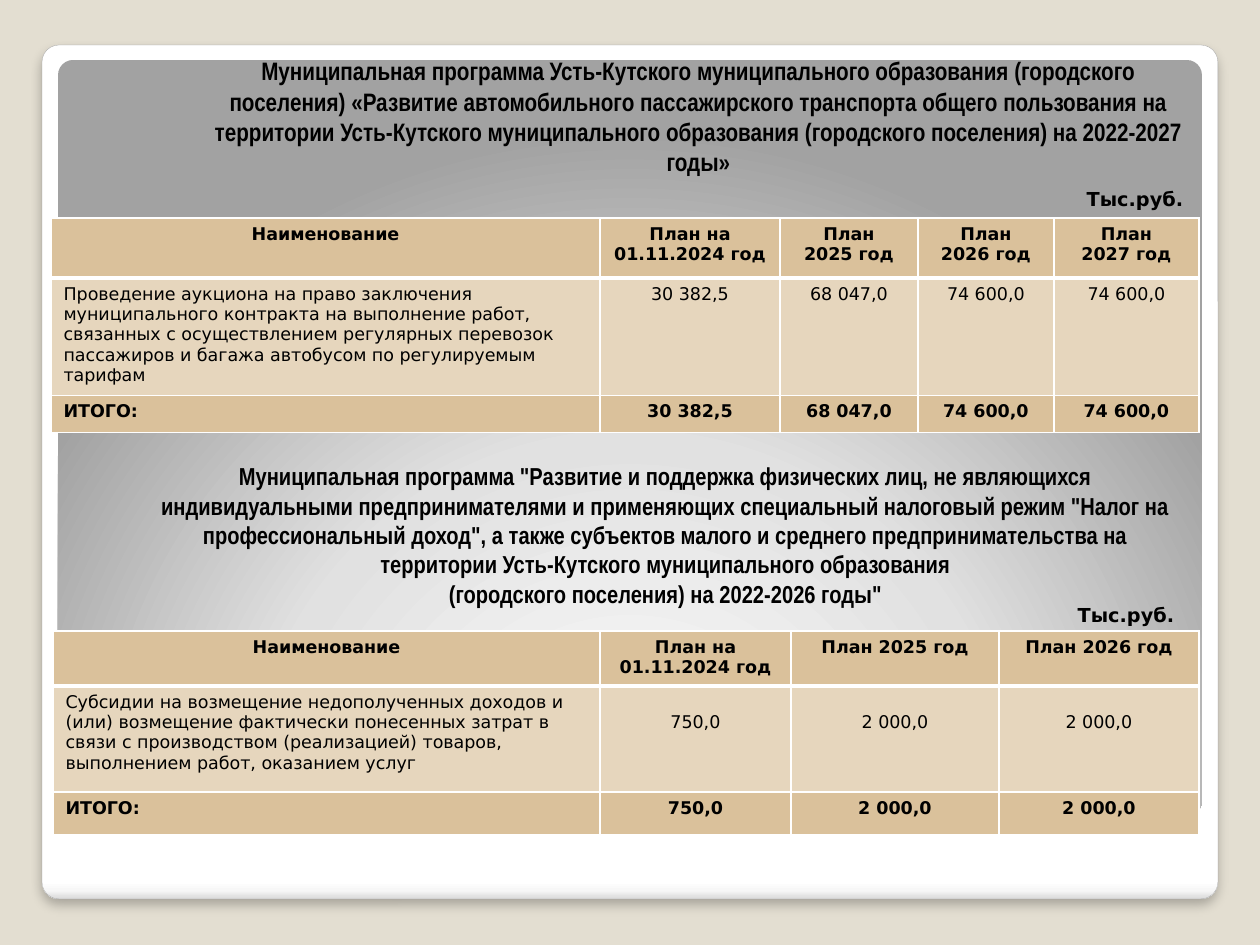
from lxml import etree
from pptx import Presentation, util as u
from pptx.dml.color import RGBColor
from pptx.enum import shapes, text
from pptx.oxml import parse_xml
from pptx.oxml.ns import qn, nsdecls

PX = 914400 // 126
theme = {
    "backdrop": "E3DED1", "edge": "A4A4A4", "ink": "000000",
    "strong": "DAC19B", "light": "E6D6BD", "rule": "FFFFFF",
    "title_font": "Arial Narrow", "body_font": "DejaVu Sans",
    "title": 14.4, "subtitle": 14, "unit": 11, "cell": 10,
}


def put_text(frame, paragraphs, size, font=theme["body_font"], bold=True,
             align=text.PP_ALIGN.CENTER, anchor=text.MSO_ANCHOR.TOP, wrap=True):
    frame.word_wrap = wrap
    frame.vertical_anchor = anchor
    for i, words in enumerate(paragraphs):
        paragraph = frame.paragraphs[0] if i == 0 else frame.add_paragraph()
        paragraph.alignment = align
        run = paragraph.add_run()
        run.text = words
        run.font.size = u.Pt(size)
        run.font.name = font
        run.font.bold = bold
        run.font.color.rgb = RGBColor.from_string(theme["ink"])


def paint_gradient(shape, stops, direction):
    marks = "".join(f'<a:gs pos="{pos * 1000}"><a:srgbClr val="{color}"/></a:gs>'
                    for pos, color in stops)
    shape._element.spPr.find(qn("a:prstGeom")).addnext(parse_xml(
        f'<a:gradFill {nsdecls("a")} rotWithShape="1"><a:gsLst>{marks}</a:gsLst>{direction}</a:gradFill>'))


prs = Presentation()
prs.slide_width, prs.slide_height = 1260 * PX, 945 * PX
slide = prs.slides.add_slide(prs.slide_layouts[6])
slide.background.fill.solid()
slide.background.fill.fore_color.rgb = RGBColor.from_string(theme["backdrop"])

backings = [
    ((42, 45, 1176, 854),
     [(0, "FFFFFF"), (98, "FFFFFF"), (99, "F7F7F7"), (100, "DADADA")],
     '<a:lin ang="5400000" scaled="0"/>'),
    ((58, 60, 1144, 756),
     [(0, "FFFFFF"), (55, "E1E1E1"), (100, "A2A2A2")],
     '<a:path path="circle"><a:fillToRect l="50000" t="175000" r="50000" b="-75000"/></a:path>'),
]
cards = []
for box, stops, direction in backings:
    card = slide.shapes.add_shape(shapes.MSO_SHAPE.ROUNDED_RECTANGLE, *(v * PX for v in box))
    card.adjustments[0] = 0.02
    card.shadow.inherit = False
    card.line.fill.background()
    paint_gradient(card, stops, direction)
    cards.append(card)

page = cards[0]
page.line.color.rgb = RGBColor.from_string(theme["edge"])
page.line.width = u.Pt(0.16)
page._element.spPr.find(qn("a:effectLst")).append(parse_xml(
    f'<a:outerShdw {nsdecls("a")} blurRad="76200" dist="50800" dir="5400000" algn="t" rotWithShape="0">'
    f'<a:srgbClr val="{theme["ink"]}"><a:alpha val="25000"/></a:srgbClr></a:outerShdw>'))

heading = {"font": theme["title_font"]}
captions = [
    ((192, 58, 1013, 125),
     ["Муниципальная программа Усть-Кутского муниципального образования (городского поселения) "
      "«Развитие автомобильного пассажирского транспорта общего пользования на территории "
      "Усть-Кутского муниципального образования (городского поселения) на 2022-2027 годы»"],
     theme["title"], {**heading, "anchor": text.MSO_ANCHOR.BOTTOM}),
    ((1072, 183, 126, 31), ["Тыс.руб."], theme["unit"],
     {"anchor": text.MSO_ANCHOR.MIDDLE, "wrap": False}),
    ((144, 455, 1043, 158),
     ['Муниципальная программа "Развитие и поддержка физических лиц, не являющихся '
      'индивидуальными предпринимателями и применяющих специальный налоговый режим "Налог на '
      'профессиональный доход", а также субъектов малого и среднего предпринимательства на '
      'территории Усть-Кутского муниципального образования',
      '(городского поселения) на 2022-2026 годы"'],
     theme["subtitle"], heading),
    ((1065, 597, 122, 37), ["Тыс.руб."], theme["unit"], {"wrap": False}),
]
for box, paragraphs, size, style in captions:
    caption = slide.shapes.add_textbox(*(v * PX for v in box))
    put_text(caption.text_frame, paragraphs, size, **style)

budgets = [
    {"at": (51, 218), "columns": [549, 180, 138, 136, 145], "rows": [60, 114, 37],
     "years": ["План\n2025 год", "План\n2026 год", "План\n2027 год"],
     "measure": "Проведение аукциона на право заключения муниципального контракта на выполнение "
                "работ, связанных с осуществлением регулярных перевозок пассажиров и багажа "
                "автобусом по регулируемым тарифам",
     "amounts": ["30 382,5", "68 047,0", "74 600,0", "74 600,0"], "amount_top": 6},
    {"at": (53, 631), "columns": [547, 191, 208, 200], "rows": [55, 106, 43],
     "years": ["План 2025 год", "План 2026 год"],
     "measure": "Субсидии на возмещение недополученных доходов и (или) возмещение фактически "
                "понесенных затрат в связи с производством (реализацией) товаров, выполнением "
                "работ, оказанием услуг",
     "amounts": ["750,0", "2 000,0", "2 000,0"], "amount_top": 26},
]
for budget in budgets:
    columns, rows = budget["columns"], budget["rows"]
    size = (sum(columns), sum(rows))
    table = slide.shapes.add_table(len(rows), len(columns),
                                   *(v * PX for v in budget["at"] + size)).table
    table.first_row = table.horz_banding = False
    for column, width in zip(table.columns, columns):
        column.width = width * PX
    content = [
        ["Наименование", "План на 01.11.2024 год"] + budget["years"],
        [budget["measure"]] + budget["amounts"],
        ["ИТОГО:"] + budget["amounts"],
    ]
    for r, values in enumerate(content):
        table.rows[r].height = rows[r] * PX
        for c, value in enumerate(values):
            cell = table.cell(r, c)
            is_measure = r == 1
            is_label = r > 0 and c == 0
            cell.margin_top = (budget["amount_top"] if is_measure and c else 6) * PX
            put_text(cell.text_frame, value.split("\n"), theme["cell"], bold=not is_measure,
                     align=text.PP_ALIGN.LEFT if is_label else text.PP_ALIGN.CENTER)
            props = cell._tc.get_or_add_tcPr()
            for side in ("L", "R", "T", "B"):
                heavy = (r, side) in ((0, "B"), (1, "T"))
                border = etree.SubElement(props, qn(f"a:ln{side}"), w=str(u.Pt(3 if heavy else 1)))
                paint = etree.SubElement(border, qn("a:solidFill"))
                etree.SubElement(paint, qn("a:srgbClr"), val=theme["rule"])
            cell.fill.solid()
            cell.fill.fore_color.rgb = RGBColor.from_string(theme["light" if is_measure else "strong"])

prs.save("out.pptx")
